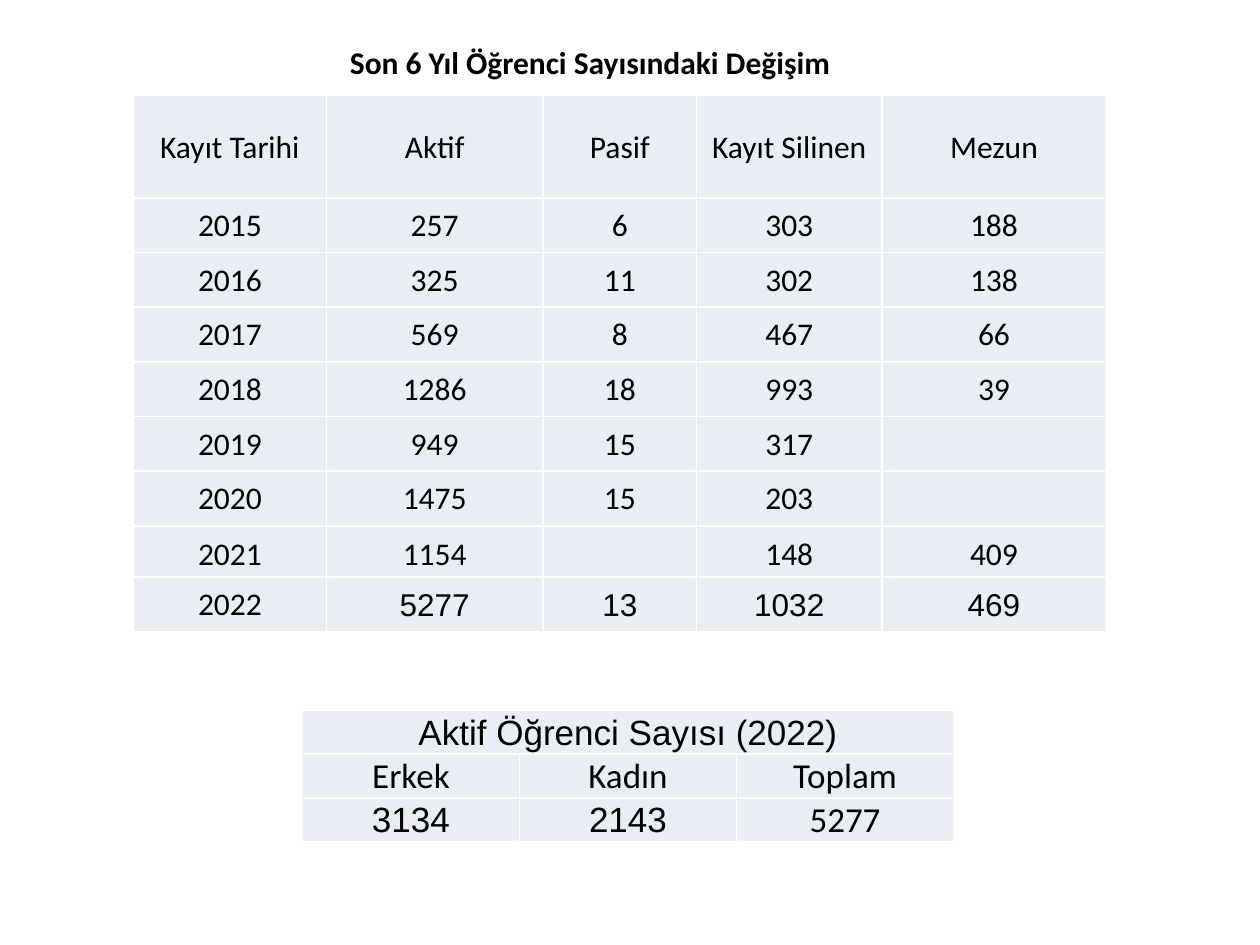
from lxml import etree
from pptx import Presentation
from pptx.dml.color import RGBColor
from pptx.enum.text import MSO_ANCHOR as Anchor, PP_ALIGN as Align
from pptx.oxml.ns import qn
from pptx.util import Inches, Pt

BODY, DIGITS = "Calibri", "Arial"


def color(hex_code):
    return RGBColor.from_string(hex_code)


def write(frame, text, font=BODY, size=18, bold=False, ink="000000"):
    """Put one centred line of text into a text frame."""
    para = frame.paragraphs[0]
    para.alignment = Align.CENTER
    span = para.add_run()
    span.text = text
    span.font.name, span.font.size, span.font.bold = font, Pt(size), bold
    span.font.color.rgb = color(ink)


class Page:
    """The current slide and its style; lengths are percent of the slide."""
    cell_fill, border = "E9EDF4", "FFFFFF"

    def __init__(self, deck):
        self.deck = deck
        self.slide = deck.slides.add_slide(deck.slide_layouts[6])

    def across(self, percent):
        return round(self.deck.slide_width * percent / 100)

    def down(self, percent):
        return round(self.deck.slide_height * percent / 100)

    def title(self, text, left, top, width, height):
        box = self.slide.shapes.add_textbox(
            self.across(left), self.down(top), self.across(width), self.down(height))
        box.text_frame.word_wrap = True
        write(box.text_frame, text, bold=True)

    def table(self, rows, left, top, widths, heights, size=18, arial=()):
        """Add a table; arial lists the (row, column) cells set in Arial."""
        table = self.slide.shapes.add_table(
            len(rows), len(widths), self.across(left), self.down(top),
            self.across(sum(widths)), self.down(sum(heights))).table
        table.first_row = table.horz_banding = False
        for column, width in zip(table.columns, widths):
            column.width = self.across(width)
        for line, height in zip(table.rows, heights):
            line.height = self.down(height)
        for r, values in enumerate(rows):
            for c in range(len(widths)):
                self.style_cell(table.cell(r, c))
            for c, value in enumerate(values):
                if value:
                    font = DIGITS if (r, c) in arial else BODY
                    write(table.cell(r, c).text_frame, value, font, size)
            if len(values) == 1:
                table.cell(r, 0).merge(table.cell(r, len(widths) - 1))

    def style_cell(self, cell):
        cell.fill.solid()
        cell.fill.fore_color.rgb = color(self.cell_fill)
        cell.vertical_anchor = Anchor.MIDDLE
        cell.margin_left = cell.margin_right = cell.margin_top = Inches(0.01)
        cell.margin_bottom = 0
        # Borders must come before the fill
        properties = cell.fill._xPr
        for place, side in enumerate(("a:lnL", "a:lnR", "a:lnT", "a:lnB")):
            line = etree.Element(qn(side), w=str(Pt(1)))
            fill = etree.SubElement(line, qn("a:solidFill"))
            etree.SubElement(fill, qn("a:srgbClr"), val=self.border)
            properties.insert(place, line)


def main():
    deck = Presentation()
    deck.slide_width, deck.slide_height = Inches(10), Inches(7.5)
    page = Page(deck)

    # Students by year of registration
    left, widths, row = 10.6, [15.3, 17.2, 12.2, 14.7, 17.8], 5.79
    years = [
        ["Kayıt Tarihi", "Aktif", "Pasif", "Kayıt Silinen", "Mezun"],
        ["2015", "257", "6", "303", "188"],
        ["2016", "325", "11", "302", "138"],
        ["2017", "569", "8", "467", "66"],
        ["2018", "1286", "18", "993", "39"],
        ["2019", "949", "15", "317", ""],
        ["2020", "1475", "15", "203", ""],
    ]
    page.table(years, left, 10.13, widths, [10.8] + [row] * 6)

    # Title
    page.title("Son 6 Yıl Öğrenci Sayısındaki Değişim", 19.3, 3.87, 55.1, 5.33)

    # The two latest years, each a table of its own
    page.table([["2021", "1154", "", "148", "409"]], left, 55.73, widths, [row])
    page.table([["2022", "5277", "13", "1032", "469"]], left, 61.07, widths, [row],
               arial=[(0, c) for c in range(1, 5)])

    # Active students by gender
    active = [["Aktif Öğrenci Sayısı (2022)"],
              ["Erkek", "Kadın", "Toplam"],
              ["3134", "2143", "5277"]]
    page.table(active, 24, 75.2, [17.23] * 3, [4.27, 4.67, 4.67], size=20,
               arial=[(0, 0), (2, 0), (2, 1)])

    deck.save("out.pptx")


if __name__ == "__main__":
    main()
